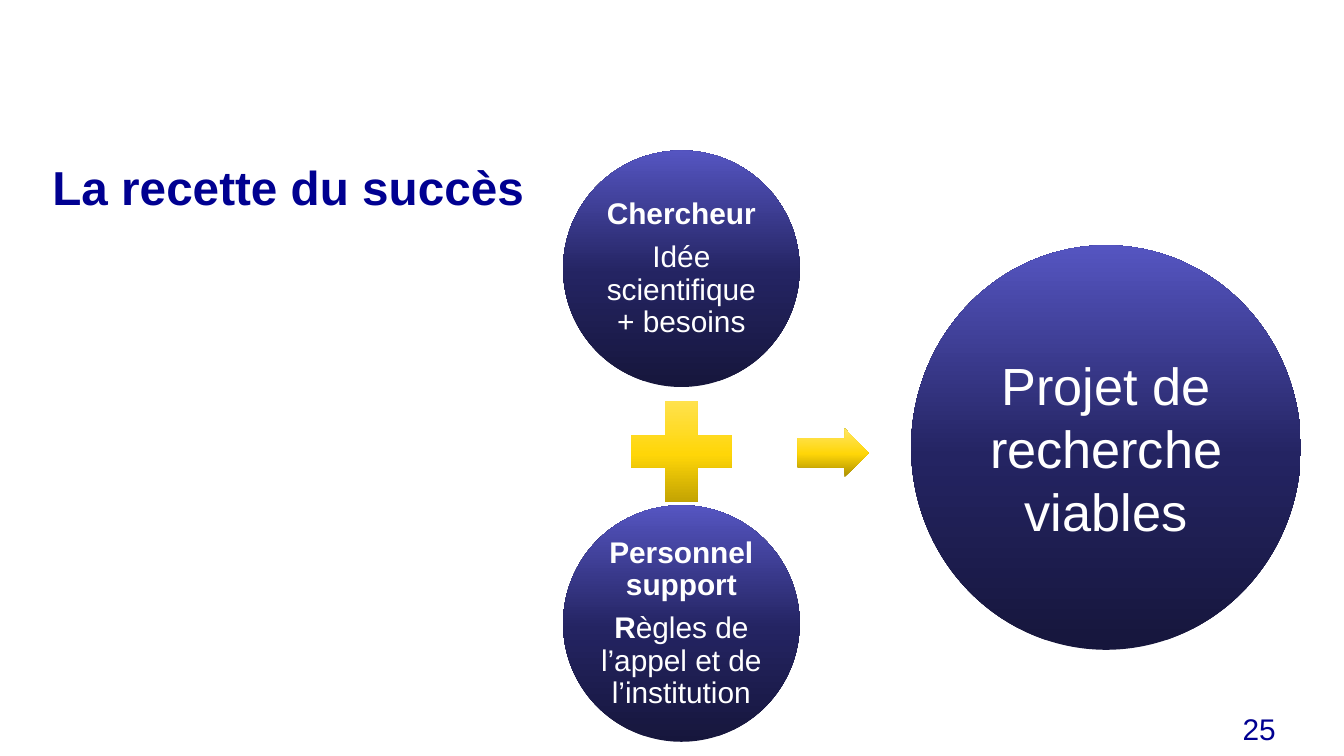
from copy import deepcopy

from pptx import Presentation
from pptx.dml.color import RGBColor
from pptx.enum.shapes import MSO_SHAPE
from pptx.enum.text import MSO_ANCHOR, PP_ALIGN
from pptx.util import Inches, Pt

ELLIPSE, PLUS, ARROW = MSO_SHAPE.OVAL, MSO_SHAPE.MATH_PLUS, MSO_SHAPE.RIGHT_ARROW
LEFT, CENTER, RIGHT = PP_ALIGN.LEFT, PP_ALIGN.CENTER, PP_ALIGN.RIGHT
TOP, MIDDLE = MSO_ANCHOR.TOP, MSO_ANCHOR.MIDDLE

THEME = {
    "font": "Arial",
    "navy": "000091",
    "white": "FFFFFF",
    "title_size": 25.5,
    "body_size": 16,
    "result_size": 28,
    # Stops run from the bottom of a shape to its top
    "blue": [(0, "16163C"), (0.48, "242462"), (1, "5555C1")],
    "gold": [(0, "AB8F00"), (0.48, "FFD608"), (1, "FFE666")],
}

SLIDE_WIDTH = 10
SLIDE_HEIGHT = SLIDE_WIDTH * 9 / 16
INGREDIENT_X, RESULT_X = 5.07, 8.23
INGREDIENT_SIZE = (1.76, 1.76)
INSCRIBED = 0.71  # share of a circle's size taken by its text

# Each paragraph is a list of (words, bold)
TITLE = [[("La recette du succès", True)]]
PAGE_NUMBER = [[("25", False)]]
RESEARCHER = [
    [("Chercheur", True)],
    [("Idée scientifique + besoins", False)],
]
SUPPORT = [
    [("Personnel support", True)],
    [("R", True), ("ègles de l’appel et de l’institution", False)],
]
RESULT = [[("Projet de recherche viables", False)]]

INGREDIENT_FORMAT = {"size": "body_size", "line_spacing": 0.9, "space_after": 6,
                     "insets": (0.02, 0.02)}
RESULT_FORMAT = {"size": "result_size", "space_after": 12, "insets": (0.04, 0.04)}

# preset, centre, size, gradient, paragraphs, text format
RECIPE = [
    (ELLIPSE, (INGREDIENT_X, 2.0), INGREDIENT_SIZE, "blue", RESEARCHER, INGREDIENT_FORMAT),
    (PLUS, (INGREDIENT_X, 3.36), (1.02, 1.02), "gold", None, None),
    (ELLIPSE, (INGREDIENT_X, 4.64), INGREDIENT_SIZE, "blue", SUPPORT, INGREDIENT_FORMAT),
    (ARROW, (6.2, 3.37), (0.53, 0.36), "gold", None, None),
    (ELLIPSE, (RESULT_X, 3.33), (2.9, 3.01), "blue", RESULT, RESULT_FORMAT),
]


def centred_box(centre, size):
    return [c - s / 2 for c, s in zip(centre, size)] + list(size)


def fill_gradient(shape, colours):
    fill = shape.fill
    fill.gradient()
    fill.gradient_angle = 90
    first = shape.element.spPr.xpath(".//a:gs")[0]
    first.addnext(deepcopy(first))
    for stop, (position, colour) in zip(fill.gradient_stops, colours):
        stop.position = position
        stop.color.rgb = RGBColor.from_string(colour)


def add_symbol(slide, preset, box, gradient):
    symbol = slide.shapes.add_shape(preset, *map(Inches, box))
    symbol.shadow.inherit = False
    symbol.line.fill.background()
    fill_gradient(symbol, THEME[gradient])
    return symbol


def add_text(slide, box, paragraphs, size, colour="white", align=CENTER,
             anchor=MIDDLE, line_spacing=1, space_after=0, insets=(0, 0)):
    """Add a text box; insets are (left and right, top and bottom)."""
    frame = slide.shapes.add_textbox(*map(Inches, box)).text_frame
    across, down = map(Inches, insets)
    frame_format = {
        "word_wrap": True, "vertical_anchor": anchor,
        "margin_left": across, "margin_right": across,
        "margin_top": down, "margin_bottom": down,
    }
    for name, value in frame_format.items():
        setattr(frame, name, value)

    paragraph_format = {"alignment": align, "line_spacing": line_spacing,
                        "space_after": Pt(space_after)}
    for index, pieces in enumerate(paragraphs):
        paragraph = frame.add_paragraph() if index else frame.paragraphs[0]
        for name, value in paragraph_format.items():
            setattr(paragraph, name, value)
        for words, bold in pieces:
            run = paragraph.add_run()
            run.text = words
            run_format = {"name": THEME["font"], "size": Pt(THEME[size]), "bold": bold}
            for name, value in run_format.items():
                setattr(run.font, name, value)
            run.font.color.rgb = RGBColor.from_string(THEME[colour])


def main():
    deck = Presentation()
    deck.slide_width, deck.slide_height = Inches(SLIDE_WIDTH), Inches(SLIDE_HEIGHT)
    slide = deck.slides.add_slide(deck.slide_layouts[6])

    add_text(slide, (0.39, 1.22, 9.21, 0.79), TITLE, "title_size", "navy",
             align=LEFT, anchor=TOP, line_spacing=0.9)

    for preset, centre, size, gradient, paragraphs, text_format in RECIPE:
        symbol = add_symbol(slide, preset, centred_box(centre, size), gradient)
        if preset == ARROW:
            symbol.adjustments[0] = 0.6
            symbol.rotation = 0.3
        if paragraphs:
            text_size = [side * INSCRIBED for side in size]
            add_text(slide, centred_box(centre, text_size), paragraphs, **text_format)

    add_text(slide, (8.31, 5.24, 1.28, 0.38), PAGE_NUMBER, "body_size", "navy",
             align=RIGHT, anchor=TOP, insets=(0.1, 0.05))
    deck.save("out.pptx")


if __name__ == "__main__":
    main()
